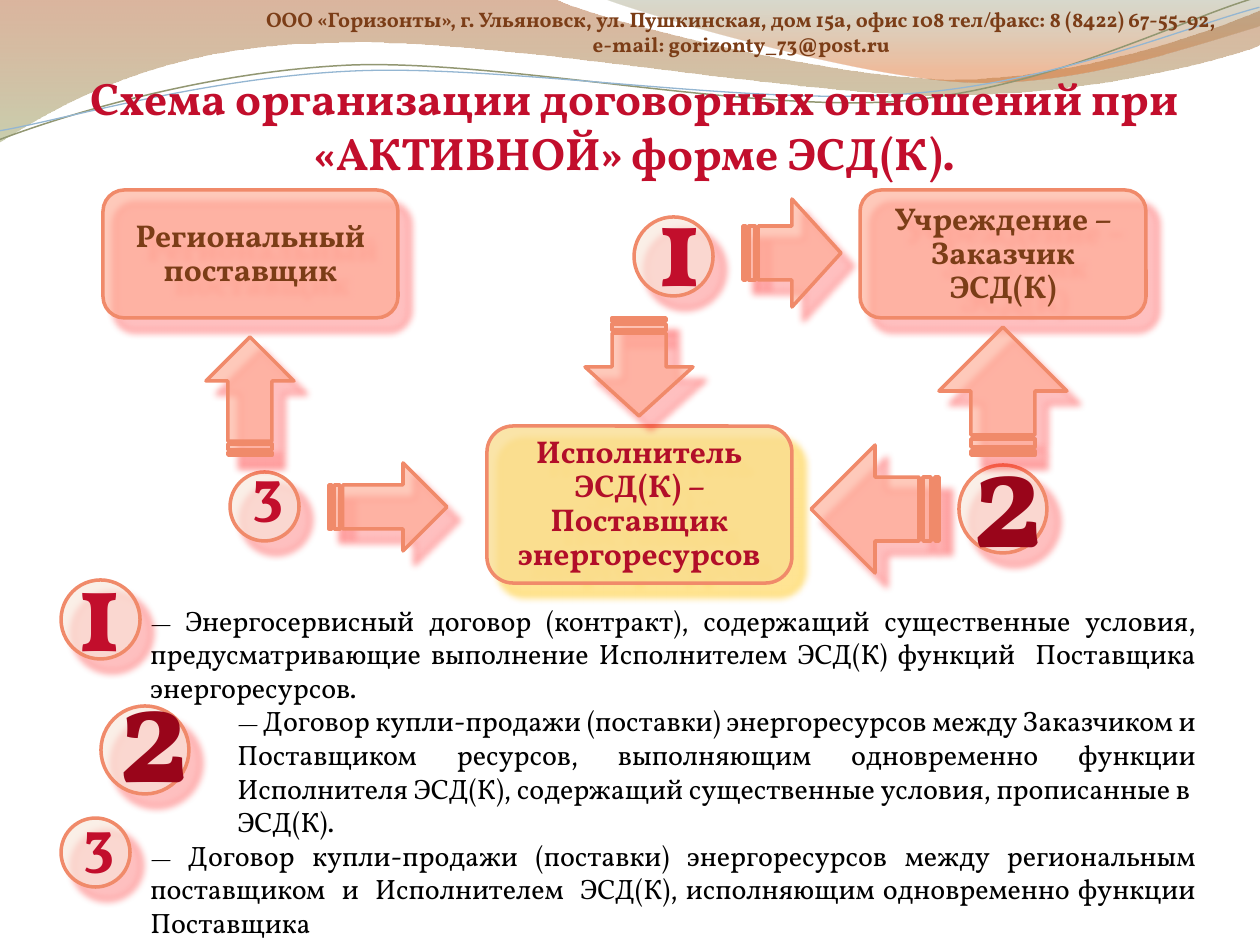
from lxml import etree
from pptx import Presentation
from pptx.dml.color import RGBColor
from pptx.enum.shapes import MSO_SHAPE
from pptx.enum.text import MSO_ANCHOR, PP_ALIGN
from pptx.oxml.ns import qn
from pptx.util import Pt

PX = 914400 / 126
FONT = "Vollkorn"
ROUND, DISC = MSO_SHAPE.ROUNDED_RECTANGLE, MSO_SHAPE.OVAL
ARROW = MSO_SHAPE.STRIPED_RIGHT_ARROW
LEFT, MID, JUST = PP_ALIGN.LEFT, PP_ALIGN.CENTER, PP_ALIGN.JUSTIFY

BLACK = RGBColor(0x00, 0x00, 0x00)
BROWN = RGBColor(0x7B, 0x3D, 0x17)
RED = RGBColor(0xC2, 0x0E, 0x2C)
WINE = RGBColor(0xB2, 0x0E, 0x29)
DARK = RGBColor(0x99, 0x05, 0x1A)
CORAL = RGBColor(0xFE, 0xAB, 0x94)
EDGE = RGBColor(0xF0, 0x8A, 0x6A)
SAND = RGBColor(0xF9, 0xDD, 0x8F)
CREAM = RGBColor(0xF8, 0xE6, 0xDA)
GLOW = RGBColor(0xFF, 0x05, 0x05)
GOLD = RGBColor(0xFF, 0xC0, 0x00)
RUST = RGBColor(0xAF, 0x5C, 0x29)
SAGE = RGBColor(0x9D, 0xA6, 0x6B)
MOSS = RGBColor(0x7D, 0x83, 0x5B)
FLAME = RGBColor(0xDD, 0x6B, 0x24)
OLIVE = RGBColor(0x92, 0x97, 0x72)
BLUE = RGBColor(0x94, 0xB6, 0xD2)

deck = Presentation()
deck.slide_width, deck.slide_height = round(1260 * PX), round(945 * PX)
slide = deck.slides.add_slide(deck.slide_layouts[6])
shapes = slide.shapes


def add_block(kind, box, fill, alpha=64, glow=GLOW, dim=40, turn=0):
    """Add a translucent preset shape with a soft coloured shadow."""
    block = shapes.add_shape(kind, *[round(v * PX) for v in box])
    block.rotation = turn
    block.fill.solid()
    block.fill.fore_color.rgb = fill
    block.line.color.rgb = EDGE
    block.line.width = Pt(2)
    block.shadow.inherit = False
    props = block._element.spPr
    tint = props.find(qn("a:solidFill"))[0]
    etree.SubElement(tint, qn("a:alpha"), val=str(alpha * 1000))
    cast = etree.SubElement(props.find(qn("a:effectLst")), qn("a:outerShdw"),
                            blurRad=str(Pt(4)), dist=str(Pt(10)),
                            dir=str(48 * 60000), rotWithShape="0")
    tint = etree.SubElement(cast, qn("a:srgbClr"), val=str(glow))
    etree.SubElement(tint, qn("a:alpha"), val=str(dim * 1000))
    return block


def add_text(box, paras, size, color, bold=True, align=MID):
    """Add a wrapped text box with one style for all paragraphs."""
    frame = shapes.add_textbox(*[round(v * PX) for v in box]).text_frame
    frame.word_wrap = True
    frame.text = "\n".join(paras)
    for para in frame.paragraphs:
        para.alignment = align
        font = para.font
        font.name, font.size, font.bold = FONT, Pt(size), bold
        font.color.rgb = color
    return frame


# Waves: a pair is a straight step, six numbers are a Bezier step
WAVES = [
    ([(0, 0), (554, -1), (600, 21, 837, 79, 955, 79),
      (1075, 79, 1207, 33, 1260, 11), (1261, 45),
      (1239, 55, 1096, 96, 940, 95), (784, 95, 481, 35, 324, 43),
      (163, 45, 58, 105, -1, 142), (0, 0)],
     [(0, RUST, 45), (1, SAGE, 55)], None, 0),
    ([(604, -1), (641, 14, 859, 78, 969, 82),
      (1079, 87, 1211, 40, 1260, 26), (1260, 0), (604, -1)],
     [(0, MOSS, 30), (0.8, FLAME, 45)], None, 0),
    ([(-3, 110), (59, 90, 200, 52, 350, 52),
      (498, 53, 745, 118, 897, 114), (1048, 109, 1184, 45, 1260, 27)],
     None, OLIVE, 0.85),
    ([(-2, 101), (58, 94, 207, 57, 357, 58),
      (508, 59, 751, 112, 902, 107), (1052, 104, 1187, 53, 1262, 37)],
     None, BLUE, 0.75),
]
for steps, stops, ink, width in WAVES:
    dots = [step[i:i + 2] for step in steps[1:] for i in range(0, len(step), 2)]
    pen = shapes.build_freeform(*steps[0], scale=PX)
    pen.add_line_segments(dots, close=bool(stops))
    wave = pen.convert_to_shape()
    wave.shadow.inherit = False
    props = wave._element.spPr
    # Join the three points of each Bezier step into one curve
    marks = list(props.iter(qn("a:lnTo")))
    for step in steps[1:]:
        trio, marks = marks[:len(step) // 2], marks[len(step) // 2:]
        if len(trio) == 3:
            curve = etree.Element(qn("a:cubicBezTo"))
            trio[0].addprevious(curve)
            for mark in trio:
                curve.append(mark[0])
                mark.getparent().remove(mark)
    if stops:
        wave.fill.gradient()
        wave.fill.gradient_angle = 270
        for stop, (place, color, _) in zip(wave.fill.gradient_stops, stops):
            stop.position = place
            stop.color.rgb = color
        tints = list(props.iter(qn("a:srgbClr")))
        for tint, (_, _, alpha) in zip(tints, stops):
            etree.SubElement(tint, qn("a:alpha"), val=str(alpha * 1000))
        wave.line.fill.background()
    else:
        wave.rotation = 357.3
        wave.fill.background()
        wave.line.color.rgb = ink
        wave.line.width = Pt(width)

# Header and title
add_text((227, 0, 1033, 63),
         ["ООО «Горизонты», г. Ульяновск, ул. Пушкинская, дом 15а, "
          "офис 108 тел/факс: 8 (8422) 67-55-92, ",
          "e-mail: gorizonty_73@post.ru "], 12, BROWN)
add_text((64, 64, 1142, 123),
         ["Схема организации договорных отношений при "
          "«АКТИВНОЙ» форме ЭСД(К)."], 26, RED)

# Legend text
legend = add_text((138, 597, 1071, 352), [
    "Энергосервисный договор (контракт), содержащий существенные условия, "
    "предусматривающие выполнение Исполнителем ЭСД(К) функций  Поставщика "
    "энергоресурсов.",
    "Договор купли-продажи (поставки) энергоресурсов между Заказчиком и "
    "Поставщиком ресурсов, выполняющим одновременно функции Исполнителя "
    "ЭСД(К), содержащий существенные условия, прописанные в  ЭСД(К).",
    "Договор купли-продажи (поставки) энергоресурсов между региональным "
    "поставщиком  и  Исполнителем  ЭСД(К), исполняющим одновременно функции "
    "Поставщика"], 16, BLACK, False, JUST)
for para in legend.paragraphs:
    body = para.runs[0].text
    para.runs[0].text = "— "
    para.runs[0].font.size = Pt(12)
    para.add_run().text = body
indent = legend.paragraphs[1]._p.get_or_add_pPr()
indent.set("marL", str(round(87 * PX)))
indent.set("indent", "0")

# Parties
PARTIES = [
    ((103, 190, 295, 128), "Региональный поставщик", BROWN, CORAL, 64, GLOW, 40),
    ((860, 190, 286, 128), "Учреждение – Заказчик ЭСД(К)", BROWN, CORAL, 64, GLOW, 40),
    ((487, 426, 305, 157), "Исполнитель ЭСД(К) – Поставщик энергоресурсов",
     WINE, SAND, 77, GOLD, 54),
]
for box, name, ink, fill, alpha, glow, dim in PARTIES:
    frame = add_block(ROUND, box, fill, alpha, glow, dim).text_frame
    frame.word_wrap = True
    frame.vertical_anchor = MSO_ANCHOR.MIDDLE
    frame.text = name
    para = frame.paragraphs[0]
    para.alignment, para.line_spacing = MID, 0.9
    font = para.font
    font.name, font.size, font.bold = FONT, Pt(18), True
    font.color.rgb = ink

# Numbered discs: disc size, digit box, type size, colour
STYLES = {"1": (79, 49, 152, 66, RED), "2": (88, 79, 183, 80, DARK),
          "3": (69, 49, 87, 35, RED)}
for digit, x, y, left, top in [
        ("2", 959, 465, 959, 401), ("3", 230, 472, 240, 445),
        ("1", 634, 217, 644, 165), ("1", 61, 580, 64, 530),
        ("2", 101, 706, 105, 636), ("3", 61, 818, 71, 796)]:
    span, wide, high, size, ink = STYLES[digit]
    add_block(DISC, (x, y, span, span), CREAM)
    add_text((left, top, wide, high), [digit], size, ink, align=LEFT)

# Arrows
for *box, turn in [(939, 327, 128, 128, 270), (811, 445, 128, 128, 180),
                   (191, 352, 118, 88, 270), (329, 463, 118, 88, 0),
                   (590, 313, 98, 108, 90), (743, 199, 98, 108, 0)]:
    add_block(ARROW, box, CORAL, turn=turn)

deck.save("out.pptx")
